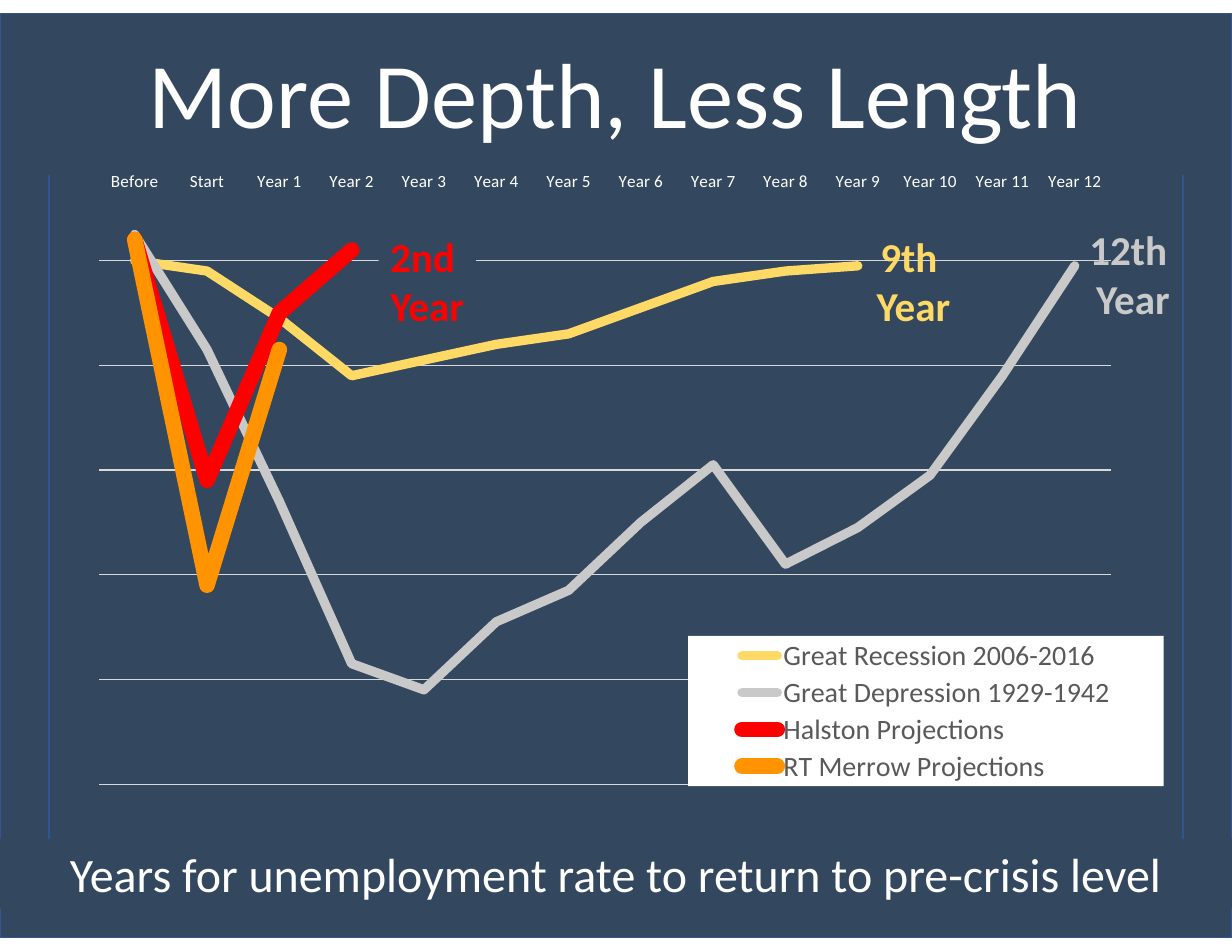
from lxml import etree
from pptx import Presentation
from pptx.chart.data import CategoryChartData
from pptx.dml.color import RGBColor
from pptx.enum.chart import XL_CHART_TYPE, XL_LEGEND_POSITION, XL_TICK_MARK
from pptx.enum.shapes import MSO_SHAPE
from pptx.enum.text import MSO_ANCHOR, PP_ALIGN
from pptx.oxml import parse_xml
from pptx.oxml.ns import nsdecls, qn
from pptx.util import Inches, Pt

LINE = XL_CHART_TYPE.LINE
BOTTOM = XL_LEGEND_POSITION.BOTTOM
NO_TICK = XL_TICK_MARK.NONE
RECT, FRAME = MSO_SHAPE.RECTANGLE, MSO_SHAPE.FRAME
CENTER, MIDDLE = PP_ALIGN.CENTER, MSO_ANCHOR.MIDDLE

# Content
TITLE = "More Depth, Less Length"
CAPTION = "Years for unemployment rate to return to pre-crisis level"
CATEGORIES = ["Before", "Start"] + [f"Year {n}" for n in range(1, 13)]
SERIES = [  # name, colour key, line width, values
    ("Great Recession 2006-2016", "yellow", 6,
     [-18, -20, -29, -40, -37, -34, -32, -27, -22, -20, -19]),
    ("Great Depression 1929-1942", "grey", 6,
     [-13, -35, -64, -95, -100, -87, -81, -68, -57, -76, -69, -59, -40, -19]),
    ("Halston Projections", "red", 10, [-14, -60, -28, -16]),
    ("RT Merrow Projections", "orange", 10, [-14, -80, -35]),
]
CALLOUTS = [  # lines, colour key, box, filled
    (["2nd ", "Year"], "red", (3.38, 2.01, 0.87, 0.99), True),
    (["9th", " Year"], "yellow", (7.64, 2.01, 0.95, 0.99), False),
    (["12th ", "Year"], "grey", (9.62, 1.95, 0.99, 0.99), False),
]

# Theme and layout
COLORS = {"navy": "33485F", "white": "FFFFFF", "yellow": "FFD966", "grey": "C9C9C9",
          "red": "FF0000", "orange": "FF9300", "grid": "D9D9D9", "legend": "595959",
          "border": "325491", "black": "000000"}
SIZES = {"title": 59.4, "caption": 30.8, "callout": 26.4, "legend": 18, "axis": 11}
FONT = "Calibri"
W, H = 11, 8.5
PANEL = (0, 0.12, W, 8.25)
CHART = (0.38, 1.13, 10.01, 6.24)
PLOT_SHARE = (0.05, 0.042, 0.903, 0.899)
LEGEND_SHARE = (0.576, 0.729, 0.424, 0.215)
TOP_VALUE, STEP, BANDS = 2, 20, 6


def color(key):
    return RGBColor.from_string(COLORS[key])


def inches(box):
    return [Inches(v) for v in box]


def set_font(font, size, key, bold=None):
    font.name, font.size, font.bold = FONT, Pt(SIZES[size]), bold
    font.color.rgb = color(key)


def fill(sp, key):
    sp.fill.solid()
    sp.fill.fore_color.rgb = color(key)


def add_block(slide, box, kind=RECT, border=None):
    sp = slide.shapes.add_shape(kind, *inches(box))
    sp.shadow.inherit = False
    fill(sp, "navy")
    if border:
        sp.line.color.rgb = color(border)
        sp.line.width = Pt(1)
    else:
        sp.line.fill.background()
    return sp


def write(sp, lines, size, key, bold=None, wrap=True):
    tf = sp.text_frame
    tf.word_wrap, tf.vertical_anchor = wrap, MIDDLE
    for i, line in enumerate(lines):
        p = tf.paragraphs[0] if i == 0 else tf.add_paragraph()
        p.text, p.alignment = line, CENTER
        set_font(p.font, size, key, bold)


def set_layout(parent, index, share, inner=False):
    """Place a plot area or legend by shares of the chart."""
    for old in parent.findall(qn("c:layout")):
        parent.remove(old)
    layout = parse_xml(f"<c:layout {nsdecls('c')}><c:manualLayout/></c:layout>")
    names = ["xMode", "yMode", "x", "y", "w", "h"]
    values = ["edge", "edge", *share]
    if inner:
        names, values = ["layoutTarget"] + names, ["inner"] + values
    for name, value in zip(names, values):
        etree.SubElement(layout[0], qn(f"c:{name}")).set("val", str(value))
    parent.insert(index, layout)


def add_line_chart(slide):
    data = CategoryChartData()
    data.categories = CATEGORIES
    for name, _, _, values in SERIES:
        data.add_series(name, values + [None] * (len(CATEGORIES) - len(values)))
    chart = slide.shapes.add_chart(LINE, *inches(CHART), data).chart
    chart.has_title = False
    chart.font.name = FONT
    chart.plots[0].vary_by_categories = False
    for s, (_, key, width, _) in zip(chart.plots[0].series, SERIES):
        s.smooth = False
        s.format.line.color.rgb = color(key)
        s.format.line.width = Pt(width)
        s.format.line._get_or_add_ln().set("cap", "rnd")

    # Axes
    cat, val = chart.category_axis, chart.value_axis
    cat.major_tick_mark = NO_TICK
    cat.format.line.color.rgb = color("black")
    cat.format.line.width = Pt(3)
    set_font(cat.tick_labels.font, "axis", "white")
    val.maximum_scale, val.minimum_scale = TOP_VALUE, TOP_VALUE - STEP * BANDS
    val.major_unit, val.visible = STEP, False
    val.major_gridlines.format.line.color.rgb = color("grid")
    val.major_gridlines.format.line.width = Pt(0.75)

    # Legend
    chart.has_legend = True
    legend = chart.legend
    legend.position, legend.include_in_layout = BOTTOM, False
    set_font(legend.font, "legend", "legend")
    set_layout(legend._element, 1, LEGEND_SHARE)
    legend._element.find(qn("c:overlay")).addnext(parse_xml(
        f"<c:spPr {nsdecls('c', 'a')}><a:solidFill><a:srgbClr val=\"{COLORS['white']}\"/>"
        "</a:solidFill></c:spPr>"))
    set_layout(chart._chartSpace.chart.plotArea, 0, PLOT_SHARE, inner=True)


def main():
    prs = Presentation()
    prs.slide_width, prs.slide_height = Inches(W), Inches(H)
    slide = prs.slides.add_slide(prs.slide_layouts[5])

    # Panel and chart
    add_block(slide, PANEL)
    add_line_chart(slide)

    # Recovery callouts
    for lines, key, box, filled in CALLOUTS:
        sp = add_block(slide, box) if filled else slide.shapes.add_textbox(*inches(box))
        write(sp, lines, "callout", key, bold=True, wrap=False)

    # Frame and the band behind the title
    frame = add_block(slide, PANEL, FRAME, "border")
    frame.adjustments[0] = 0.053
    add_block(slide, (0.38, 0.56, 10.23, 1))

    # Title, brought in front of the frame
    title = slide.shapes.title
    title.left, title.top, title.width, title.height = inches((0.01, 0.27, 10.97, 1.1))
    fill(title, "navy")
    write(title, [TITLE], "title", "white")
    slide.shapes._spTree.append(title._element)

    # Caption
    caption = add_block(slide, (0, 7.49, W, 0.62))
    write(caption, [CAPTION], "caption", "white")

    prs.save("out.pptx")


if __name__ == "__main__":
    main()
